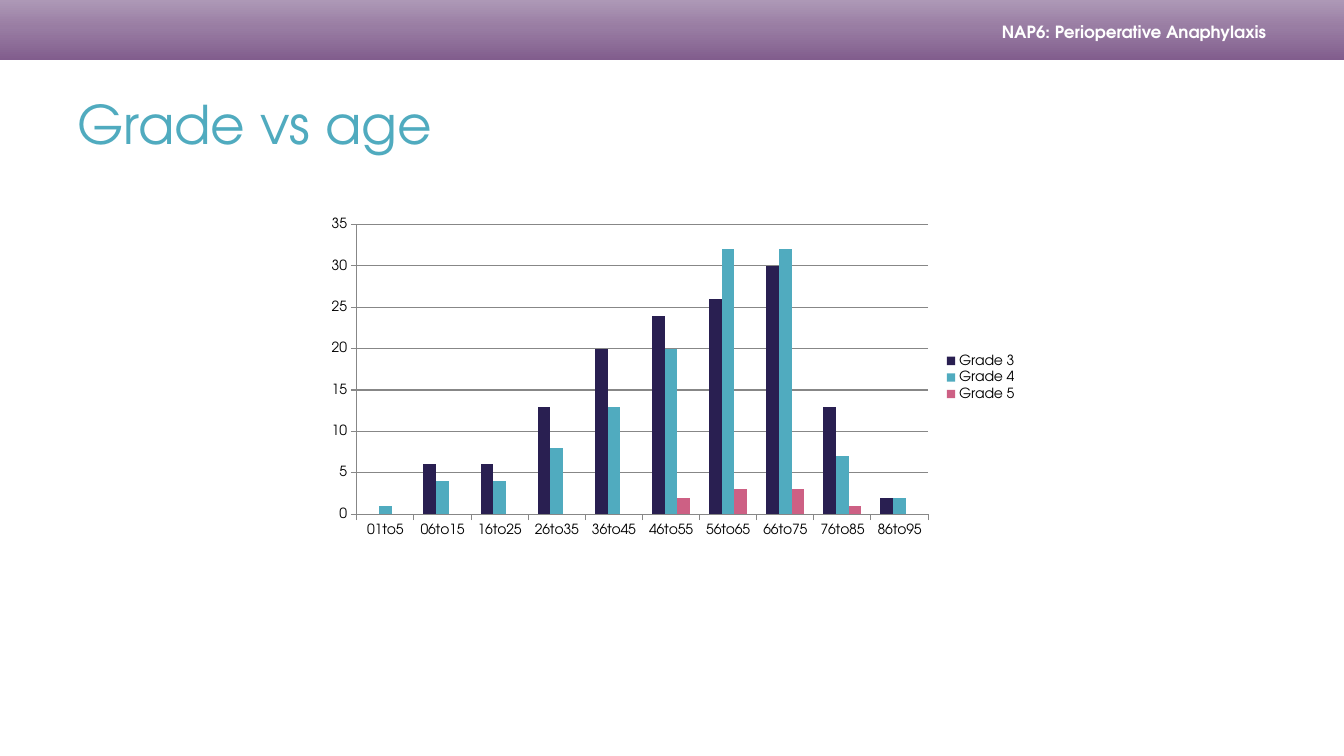
from copy import deepcopy

from pptx import Presentation
from pptx.chart.data import CategoryChartData
from pptx.dml.color import RGBColor
from pptx.enum.chart import XL_CHART_TYPE as ChartType
from pptx.enum.chart import XL_LEGEND_POSITION as LegendPosition
from pptx.enum.chart import XL_TICK_MARK as TickMark
from pptx.enum.shapes import MSO_SHAPE as Shape
from pptx.enum.text import MSO_ANCHOR as Anchor
from pptx.enum.text import PP_ALIGN as Align
from pptx.util import Pt

FONT = "TeX Gyre Adventor"
WHITE = RGBColor(0xFF, 0xFF, 0xFF)
BLACK = RGBColor(0x00, 0x00, 0x00)
NAVY = RGBColor(0x29, 0x1F, 0x51)
TEAL = RGBColor(0x50, 0xAB, 0xBF)
PINK = RGBColor(0xCD, 0x60, 0x84)
GREY = RGBColor(0x87, 0x87, 0x87)
BANNER_STOPS = [
    (0, RGBColor(0x81, 0x5D, 0x8D)),
    (0.55, RGBColor(0x99, 0x7D, 0xA3)),
    (1, RGBColor(0xAD, 0x98, 0xB6)),
]

HEADER = "NAP6: Perioperative Anaphylaxis"
TITLE = "Grade vs age"
AGES = ["01to5", "06to15", "16to25", "26to35", "36to45",
        "46to55", "56to65", "66to75", "76to85", "86to95"]
GRADES = [
    ("Grade 3", NAVY, [None, 6, 6, 13, 20, 24, 26, 30, 13, 2]),
    ("Grade 4", TEAL, [1, 4, 4, 8, 13, 20, 32, 32, 7, 2]),
    ("Grade 5", PINK, [None] * 5 + [2, 3, 3, 1, None]),
]

WIDTH, HEIGHT = 960, 540
BANNER_HEIGHT = 43.2


def style_font(font, size, color, bold=False):
    for key, value in {"name": FONT, "size": Pt(size), "bold": bold}.items():
        setattr(font, key, value)
    font.color.rgb = color


def add_banner(slide):
    banner = slide.shapes.add_shape(
        Shape.RECTANGLE, 0, 0, Pt(WIDTH), Pt(BANNER_HEIGHT))
    banner.shadow.inherit = False
    banner.line.fill.background()
    banner.fill.gradient()
    banner.fill.gradient_angle = 90
    stop_list = banner.fill._fill._gradFill.gsLst
    stop_list.append(deepcopy(stop_list[-1]))
    for stop, (position, color) in zip(banner.fill.gradient_stops, BANNER_STOPS):
        stop.position = position
        stop.color.rgb = color

    header = slide.shapes.add_textbox(Pt(601.2), Pt(13), Pt(320.4), Pt(20)).text_frame
    header.word_wrap = True
    header.vertical_anchor = Anchor.MIDDLE
    header.margin_right = Pt(17)
    header.text = HEADER
    header.paragraphs[0].alignment = Align.RIGHT
    style_font(header.paragraphs[0].runs[0].font, 12, WHITE, bold=True)


def add_title(slide):
    title = slide.shapes.title
    places = {"left": 48, "top": BANNER_HEIGHT, "width": 864, "height": 90}
    for key, value in places.items():
        setattr(title, key, Pt(value))
    title.text_frame.text = TITLE
    title.text_frame.vertical_anchor = Anchor.MIDDLE
    title.text_frame.paragraphs[0].alignment = Align.LEFT
    style_font(title.text_frame.paragraphs[0].runs[0].font, 38, TEAL)


def add_grade_chart(slide):
    data = CategoryChartData()
    data.categories = AGES
    for name, _, counts in GRADES:
        data.add_series(name, counts)
    chart = slide.shapes.add_chart(
        ChartType.COLUMN_CLUSTERED,
        Pt(226.8), Pt(151.2), Pt(506.9), Pt(236.9), data).chart
    style_font(chart.font, 10, BLACK)
    chart.has_title = False
    chart.has_legend = True
    chart.legend.position = LegendPosition.RIGHT
    chart.legend.include_in_layout = False

    plot = chart.plots[0]
    plot.gap_width = 150
    plot.overlap = 0
    plot.vary_by_categories = False
    for series, (_, color, _) in zip(plot.series, GRADES):
        series.format.fill.solid()
        series.format.fill.fore_color.rgb = color
        series.invert_if_negative = False

    counts_axis = chart.value_axis
    counts_axis.minimum_scale, counts_axis.maximum_scale = 0, 35
    counts_axis.major_unit = 5
    counts_axis.has_major_gridlines = True
    for axis in (chart.category_axis, counts_axis):
        axis.major_tick_mark = TickMark.OUTSIDE
        axis.minor_tick_mark = TickMark.NONE
    for ruled in (chart.category_axis, counts_axis, counts_axis.major_gridlines):
        ruled.format.line.color.rgb = GREY
        ruled.format.line.width = Pt(0.75)


def main():
    deck = Presentation()
    deck.slide_width, deck.slide_height = Pt(WIDTH), Pt(HEIGHT)
    slide = deck.slides.add_slide(deck.slide_layouts[5])
    add_banner(slide)
    add_title(slide)
    add_grade_chart(slide)
    deck.save("out.pptx")


if __name__ == "__main__":
    main()
